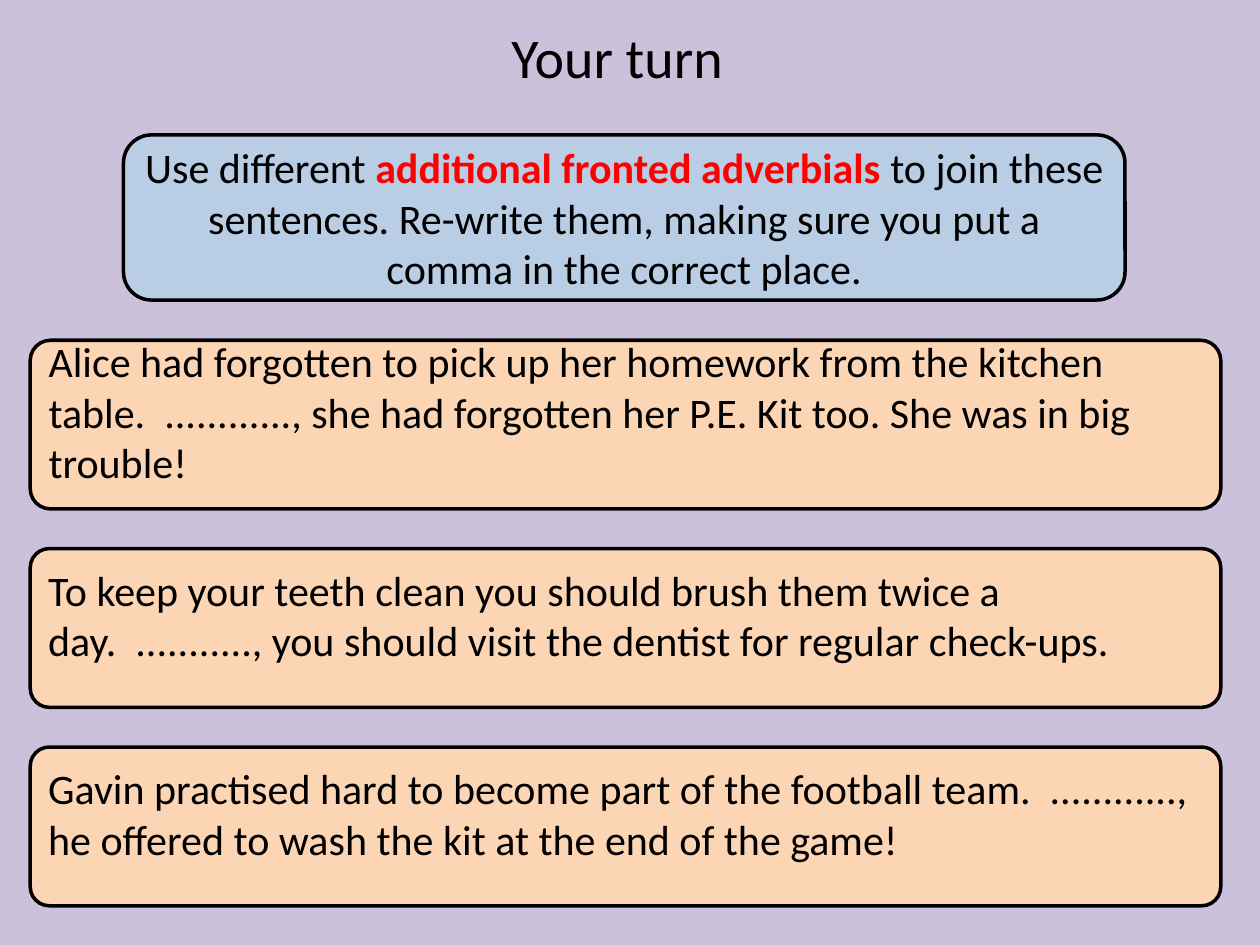
from pptx import Presentation
from pptx import util as u
from pptx.dml.color import RGBColor
from pptx.enum import shapes, text

COLOURS = {
    "background": "CCC1DA",
    "instruction": "B9CDE5",
    "sentence": "FCD5B5",
    "ink": "000000",
    "highlight": "FF0000",
}
SENTENCES = [
    (3.4, "Alice had forgotten to pick up her homework from the kitchen table.  ............, "
          "she had forgotten her P.E. Kit too. She was in big trouble!"),
    (3.2, "To keep your teeth clean you should brush them twice a day.  ..........., "
          "you should visit the dentist for regular check-ups."),
    (3.2, "Gavin practised hard to become part of the football team.  ............, "
          "he offered to wash the kit at the end of the game!"),
]
GAP = 0.8


def colour(name):
    return RGBColor.from_string(COLOURS[name])


class Worksheet:
    font = "Calibri"
    body_size = 24
    title_size = 32

    def __init__(self, slide):
        self.slide = slide
        fill = slide.background.fill
        fill.solid()
        fill.fore_color.rgb = colour("background")

    def add_wording(self, shape, spans, size, align, **frame_format):
        """Fill the shape with one paragraph of (wording, colour name, bold) spans."""
        frame = shape.text_frame
        for name, value in {"word_wrap": True, **frame_format}.items():
            setattr(frame, name, value)
        para = frame.paragraphs[0]
        para.alignment = align
        for wording, ink, bold in spans:
            span = para.add_run()
            span.text = wording
            span.font.color.rgb = colour(ink)
            for name, value in {"name": self.font, "size": u.Pt(size), "bold": bold}.items():
                setattr(span.font, name, value)

    def title(self, area, wording):
        box = self.slide.shapes.add_textbox(*map(u.Cm, area))
        self.add_wording(box, [(wording, "ink", False)], self.title_size, text.PP_ALIGN.CENTER)

    def card(self, area, fill, rounding, spans, align, **frame_format):
        box = self.slide.shapes.add_shape(
            shapes.MSO_SHAPE.ROUNDED_RECTANGLE, *map(u.Cm, area))
        box.adjustments[0] = rounding
        box.shadow.inherit = False
        box.fill.solid()
        box.fill.fore_color.rgb = colour(fill)
        box.line.color.rgb = colour("ink")
        box.line.width = u.Pt(2)
        self.add_wording(box, spans, self.body_size, align,
                         vertical_anchor=text.MSO_ANCHOR.MIDDLE, **frame_format)


def main():
    deck = Presentation()
    deck.slide_width, deck.slide_height = u.Cm(25.4), u.Cm(19.05)
    page = Worksheet(deck.slides.add_slide(deck.slide_layouts[6]))

    page.card((2.49, 2.72, 20.19, 3.33), "instruction", 0.17, [
        ("Use different ", "ink", False),
        ("additional fronted adverbials ", "highlight", True),
        ("to join these sentences. Re-write them, making sure you put a "
         "comma in the correct place.", "ink", False),
    ], text.PP_ALIGN.CENTER)

    top = 6.86
    for height, sentence in SENTENCES:
        page.card((0.61, top, 24, height), "sentence", 0.12,
                  [(sentence, "ink", False)], text.PP_ALIGN.LEFT, margin_bottom=u.Cm(0.66))
        top += height + GAP

    page.title((4.85, 0.33, 15.19, 1.63), "Your turn")
    deck.save("out.pptx")


if __name__ == "__main__":
    main()
